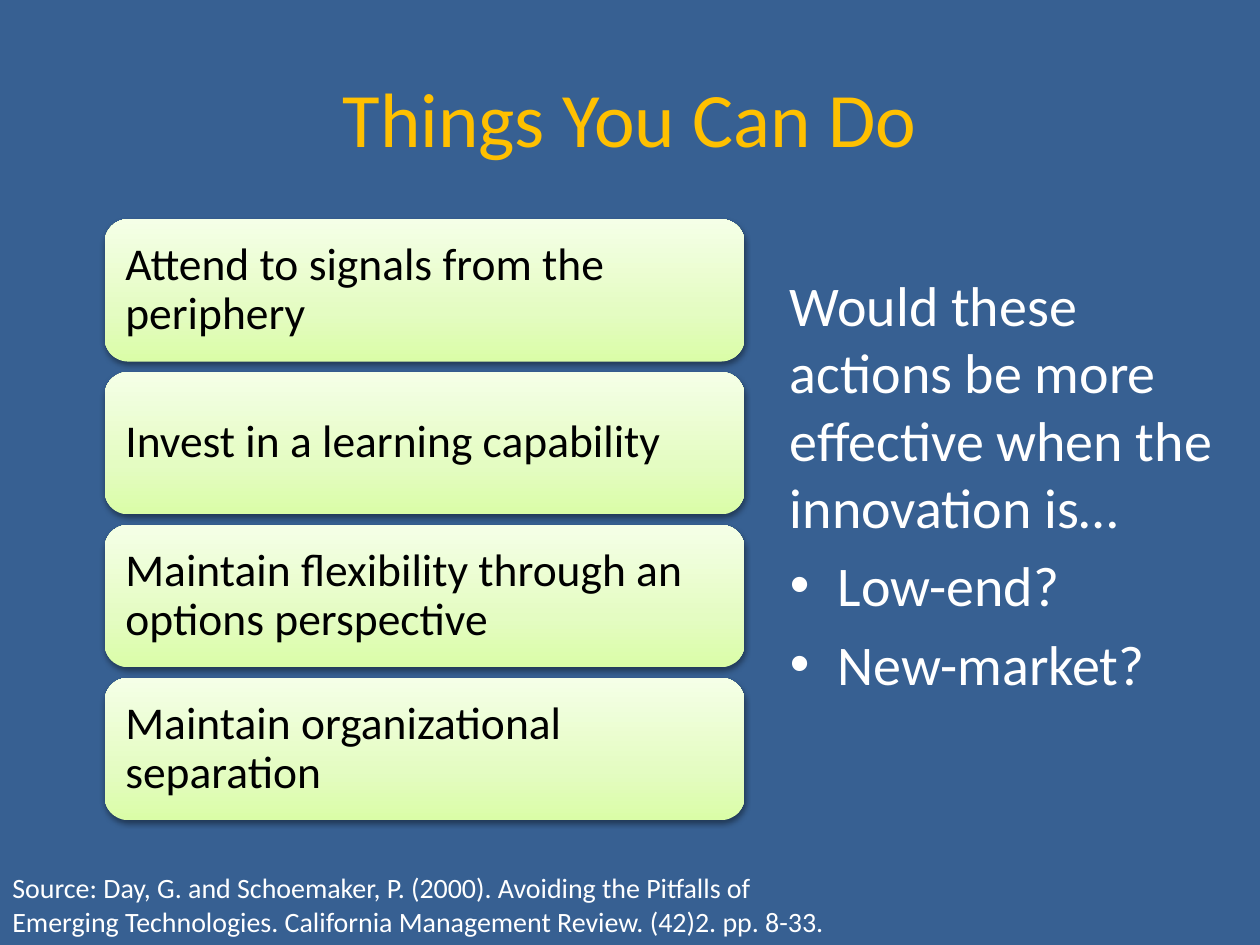
from lxml.etree import SubElement
from pptx import Presentation
from pptx.dml.color import RGBColor
from pptx.enum.shapes import MSO_SHAPE
from pptx.enum.text import MSO_ANCHOR, PP_ALIGN
from pptx.oxml import parse_xml
from pptx.oxml.ns import nsdecls, qn
from pptx.util import Inches, Pt

COLORS = {
    "background": "376092",
    "title": "FFC000",
    "body": "FFFFFF",
    "card_text": "000000",
    "shadow": "000000",
}
CARD_GRADIENT = [(0, "DAFDA7"), (35, "E4FCC2"), (100, "F5FFE7")]


class SlideBuilder:
    """Holds the style and the current slide."""

    font = "Calibri"

    def __init__(self, presentation):
        self.slide = presentation.slides.add_slide(presentation.slide_layouts[6])
        fill = self.slide.background.fill
        fill.solid()
        fill.fore_color.rgb = RGBColor.from_string(COLORS["background"])

    def fill_text(self, shape, lines, size, color, frame_format=None, paragraph_format=None):
        frame = shape.text_frame
        frame.word_wrap = True
        for name, value in (frame_format or {}).items():
            setattr(frame, name, value)
        for index, line in enumerate(lines):
            paragraph = frame.add_paragraph() if index else frame.paragraphs[0]
            for name, value in (paragraph_format or {}).items():
                setattr(paragraph, name, value)
            run = paragraph.add_run()
            run.text = line
            run.font.name = self.font
            run.font.size = Pt(size)
            run.font.color.rgb = RGBColor.from_string(COLORS[color])
        return frame

    def text(self, box, lines, size, color, frame_format=None, paragraph_format=None):
        shape = self.slide.shapes.add_textbox(*map(Inches, box))
        return self.fill_text(shape, lines, size, color, frame_format, paragraph_format)

    def bullet(self, paragraph):
        properties = paragraph._p.get_or_add_pPr()
        properties.set("marL", str(Inches(0.38)))
        properties.set("indent", str(Inches(-0.38)))
        SubElement(properties, qn("a:buFont"), typeface="Arial")
        SubElement(properties, qn("a:buChar"), char="•")

    def card(self, box, label):
        shape = self.slide.shapes.add_shape(MSO_SHAPE.ROUNDED_RECTANGLE, *map(Inches, box))
        shape.line.fill.background()
        shape.shadow.inherit = False
        properties = shape._element.spPr
        # Three-stop gradient, running from bottom to top
        stops = "".join(
            f'<a:gs pos="{position * 1000}"><a:srgbClr val="{color}"/></a:gs>'
            for position, color in CARD_GRADIENT
        )
        properties.find(qn("a:prstGeom")).addnext(parse_xml(
            f'<a:gradFill {nsdecls("a")} rotWithShape="1"><a:gsLst>{stops}</a:gsLst>'
            '<a:lin ang="16200000" scaled="0"/></a:gradFill>'
        ))
        # Soft shadow below the card
        properties.find(qn("a:effectLst")).append(parse_xml(
            f'<a:outerShdw {nsdecls("a")} blurRad="{Pt(3.1)}" dist="{Pt(1.6)}" '
            f'dir="5400000" rotWithShape="0"><a:srgbClr val="{COLORS["shadow"]}">'
            '<a:alpha val="38000"/></a:srgbClr></a:outerShdw>'
        ))
        margins = {f"margin_{side}": Inches(0.11) for side in ("left", "top", "right", "bottom")}
        self.fill_text(
            shape, [label], 26, "card_text",
            {"vertical_anchor": MSO_ANCHOR.MIDDLE, **margins},
            {"alignment": PP_ALIGN.LEFT, "line_spacing": 0.9},
        )


def main():
    presentation = Presentation()
    presentation.slide_width = Inches(10)
    presentation.slide_height = Inches(7.5)
    builder = SlideBuilder(presentation)

    # Title
    builder.text(
        (0.5, 0.3, 9, 1.25), ["Things You Can Do"], 44, "title",
        {"vertical_anchor": MSO_ANCHOR.MIDDLE}, {"alignment": PP_ALIGN.CENTER},
    )

    # Column of action cards
    actions = [
        "Attend to signals from the periphery",
        "Invest in a learning capability",
        "Maintain flexibility through an options perspective",
        "Maintain organizational separation",
    ]
    card_top, card_bottom, card_height = 1.74, 6.51, 1.13
    card_pitch = (card_bottom - card_height - card_top) / (len(actions) - 1)
    for index, action in enumerate(actions):
        builder.card((0.83, card_top + index * card_pitch, 5.08, card_height), action)

    # Source line
    builder.text(
        (0, 6.86, 6.92, 0.64),
        ["Source: Day, G. and Schoemaker, P. (2000). Avoiding the Pitfalls of "
         "Emerging Technologies. California Management Review. (42)2. pp. 8-33."],
        16, "body",
    )

    # Question with its bulleted answers
    question = builder.text(
        (6.17, 2.1, 3.75, 4.07),
        ["Would these actions be more effective when the innovation is…",
         "Low-end?", "New-market?"],
        32, "body", paragraph_format={"space_before": Pt(6.4)},
    )
    for paragraph in question.paragraphs[1:]:
        builder.bullet(paragraph)

    presentation.save("out.pptx")


if __name__ == "__main__":
    main()
